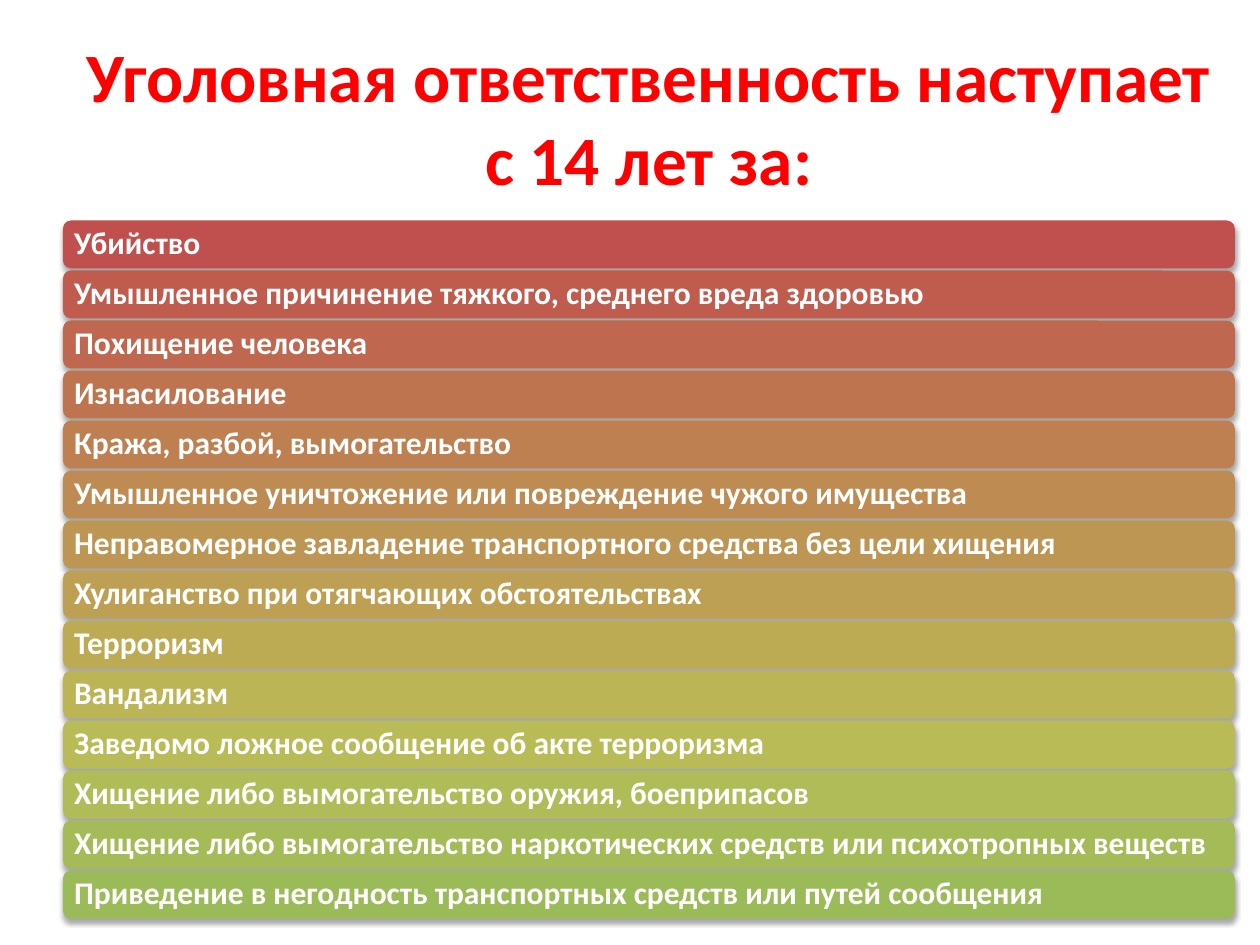
from lxml import etree
from pptx import Presentation
from pptx.dml.color import RGBColor
from pptx.enum.shapes import MSO_SHAPE
from pptx.enum.text import MSO_ANCHOR, MSO_AUTO_SIZE, PP_ALIGN
from pptx.oxml.ns import qn
from pptx.util import Inches, Pt

ROUND = MSO_SHAPE.ROUNDED_RECTANGLE
MIDDLE = MSO_ANCHOR.MIDDLE
FIXED = MSO_AUTO_SIZE.NONE
LEFT, CENTER = PP_ALIGN.LEFT, PP_ALIGN.CENTER

# Shared column and row grid, in inches
X, WIDTH = 0.5, 9.3
TOP, LAST, HEIGHT = 1.75, 6.91, 0.38

TITLE = "Уголовная ответственность наступает с 14 лет за:"
CRIMES = [
    ("Убийство", "C0504D"),
    ("Умышленное причинение тяжкого, среднего вреда здоровью", "C05C4E"),
    ("Похищение человека", "BF684F"),
    ("Изнасилование", "BF7450"),
    ("Кража, разбой, вымогательство", "BE7F51"),
    ("Умышленное уничтожение или повреждение чужого имущества", "BE8B52"),
    ("Неправомерное завладение транспортного средства без цели хищения", "BE9653"),
    ("Хулиганство при отягчающих обстоятельствах", "BDA054"),
    ("Терроризм", "BDAB54"),
    ("Вандализм", "BCB555"),
    ("Заведомо ложное сообщение об акте терроризма", "B9BC56"),
    ("Хищение либо вымогательство оружия, боеприпасов", "AFBC57"),
    ("Хищение либо вымогательство наркотических средств или психотропных веществ", "A5BB58"),
    ("Приведение в негодность транспортных средств или путей сообщения", "9BBB59"),
]


def paint(target, color):
    target.rgb = RGBColor.from_string(color)


def write(shape, text, size, color, align=LEFT, spacing=None):
    frame = shape.text_frame
    frame.word_wrap = True
    frame.auto_size = FIXED
    frame.vertical_anchor = MIDDLE
    para = frame.paragraphs[0]
    para.alignment = align
    para.line_spacing = spacing
    run = para.add_run()
    run.text = text
    run.font.name = "Calibri"
    run.font.size = Pt(size)
    run.font.bold = True
    paint(run.font.color, color)


def shade(shape):
    # Soft shadow straight below the bar
    shape.shadow.inherit = False
    effects = shape._element.spPr.find(qn("a:effectLst"))
    outer = etree.SubElement(
        effects, qn("a:outerShdw"), blurRad=str(Pt(3.1)), dist=str(Pt(1.8)),
        dir="5400000", rotWithShape="0")
    black = etree.SubElement(outer, qn("a:srgbClr"), val="000000")
    etree.SubElement(black, qn("a:alpha"), val="35000")


def add_bar(slide, top, text, color):
    bar = slide.shapes.add_shape(
        ROUND, Inches(X), Inches(top), Inches(WIDTH), Inches(HEIGHT))
    bar.fill.solid()
    paint(bar.fill.fore_color, color)
    bar.line.fill.background()
    shade(bar)
    frame = bar.text_frame
    frame.margin_left = frame.margin_right = Inches(0.07)
    frame.margin_top = frame.margin_bottom = Inches(0.07)
    write(bar, text, 18, "FFFFFF", spacing=0.9)


def add_title(slide):
    title = slide.shapes.title
    title.left, title.top = Inches(X), Inches(0.3)
    title.width, title.height = Inches(WIDTH), Inches(1.25)
    write(title, TITLE, 39.6, "FF0000", align=CENTER)


def main():
    deck = Presentation()
    deck.slide_width, deck.slide_height = Inches(10), Inches(7.5)
    slide = deck.slides.add_slide(deck.slide_layouts[5])
    add_title(slide)

    # Evenly spaced bars, one per crime
    step = (LAST - TOP) / (len(CRIMES) - 1)
    for row, (text, color) in enumerate(CRIMES):
        add_bar(slide, TOP + row * step, text, color)

    deck.save("out.pptx")


if __name__ == "__main__":
    main()
